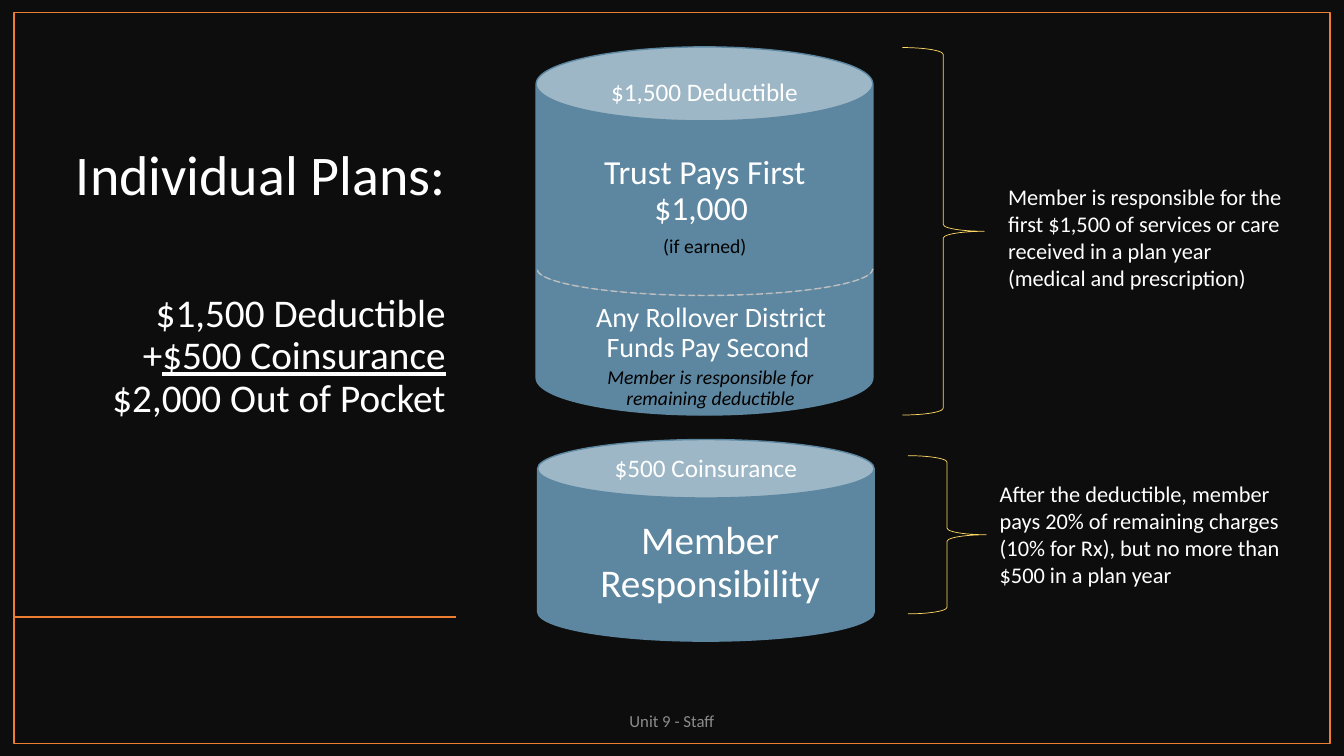
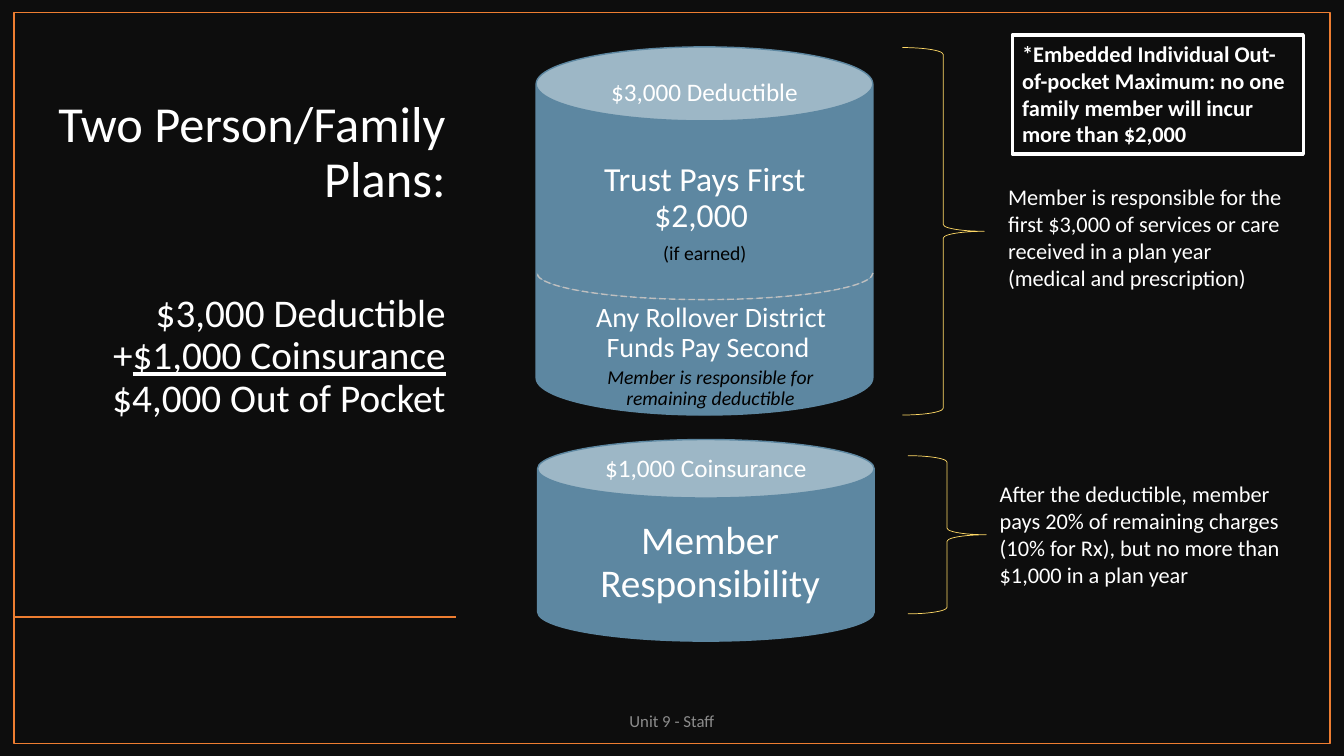
from dataclasses import dataclass

from lxml.etree import SubElement
from pptx import Presentation
from pptx.dml.color import RGBColor
from pptx.enum.dml import MSO_LINE
from pptx.enum.shapes import MSO_CONNECTOR, MSO_SHAPE
from pptx.enum.text import MSO_ANCHOR, MSO_AUTO_SIZE, PP_ALIGN
from pptx.oxml.ns import qn
from pptx.util import Pt

COLORS = {
    "background": "0D0D0D",
    "text": "FFFFFF",
    "dark_text": "000000",
    "footer": "8C8C8C",
    "frame": "ED7D31",
    "can": "5D87A1",
    "brace": "FFD966",
    "arc": "BFBFBF",
}
FONT = "Calibri"
TITLE_ONLY = 5


@dataclass
class Plan:
    title: str
    title_size: int
    title_left: float
    deductible: str
    coinsurance: str
    out_of_pocket: str
    trust_share: str
    trust_top: float
    arc_top: float
    note: str = ""


PLANS = [
    Plan("Individual Plans:", 40, 45.5, "$1,500", "$500", "$2,000", "$1,000", 104.5, 173),
    Plan("Two Person/Family Plans:", 36, 25.5, "$3,000", "$1,000", "$4,000", "$2,000", 109.5, 176,
         "*Embedded Individual Out-of-pocket Maximum: no one family member will incur more than $2,000"),
]


def color(name):
    return RGBColor.from_string(COLORS[name])


def add_run(paragraph, text, size, color_name="text", bold=None, italic=None, underline=None):
    run = paragraph.add_run()
    run.text = text
    font = run.font
    font.name = FONT
    font.size = Pt(size)
    font.color.rgb = color(color_name)
    font.bold = bold
    font.italic = italic
    font.underline = underline


def next_paragraph(frame, alignment, spacing=None, after=None):
    first = frame.paragraphs[0]
    paragraph = frame.add_paragraph() if first.runs else first
    paragraph.alignment = alignment
    paragraph.line_spacing = spacing
    if after is not None:
        paragraph.space_after = Pt(after)
    return paragraph


def add_text_box(slide, box, anchor=MSO_ANCHOR.TOP):
    frame = slide.shapes.add_textbox(*map(Pt, box)).text_frame
    frame.word_wrap = True
    frame.vertical_anchor = anchor
    return frame


def add_text(slide, box, text, size, alignment=PP_ALIGN.LEFT, spacing=None, **style):
    frame = add_text_box(slide, box)
    add_run(next_paragraph(frame, alignment, spacing), text, size, **style)


def add_outlined_shape(slide, kind, box, line_color, line_width=1, fill=None, adjustments=()):
    shape = slide.shapes.add_shape(kind, *map(Pt, box))
    shape.shadow.inherit = False
    if fill:
        shape.fill.solid()
        shape.fill.fore_color.rgb = color(fill)
    else:
        shape.fill.background()
    shape.line.color.rgb = color(line_color)
    shape.line.width = Pt(line_width)
    for index, value in enumerate(adjustments):
        shape.adjustments[index] = value
    return shape


def add_can(slide, box, rim, label, label_top):
    add_outlined_shape(slide, MSO_SHAPE.CAN, box, "can", fill="can", adjustments=[rim])
    left, _, width, _ = box
    add_text(slide, (left, label_top, width, 29), label, 18, PP_ALIGN.CENTER)


def add_brace(slide, box):
    add_outlined_shape(slide, MSO_SHAPE.RIGHT_BRACE, box, "brace", 0.5)


def add_frame(slide):
    add_outlined_shape(slide, MSO_SHAPE.RECTANGLE, (10, 9, 940, 522), "frame")
    connector = slide.shapes.add_connector(
        MSO_CONNECTOR.STRAIGHT, Pt(325.5), Pt(440.75), Pt(10), Pt(440.75))
    connector.line.color.rgb = color("frame")
    connector.line.width = Pt(1)
    SubElement(connector.element.spPr, qn("a:effectLst"))


def add_footer(slide):
    frame = add_text_box(slide, (318, 500.5, 324, 29), MSO_ANCHOR.MIDDLE)
    add_run(next_paragraph(frame, PP_ALIGN.CENTER), "Unit 9 - Staff", 12, "footer")


def fill_title(slide, plan):
    title = slide.shapes.title
    title.left, title.top = Pt(plan.title_left), Pt(52.5)
    title.width, title.height = Pt(325.5 - plan.title_left), Pt(251.5)
    frame = title.text_frame
    frame.word_wrap = True
    frame.auto_size = MSO_AUTO_SIZE.NONE
    frame.vertical_anchor = MSO_ANCHOR.BOTTOM
    add_run(next_paragraph(frame, PP_ALIGN.RIGHT, 0.9, 61), plan.title, plan.title_size)
    add_run(next_paragraph(frame, PP_ALIGN.RIGHT, 0.9), f"{plan.deductible} Deductible", 28)
    total = next_paragraph(frame, PP_ALIGN.RIGHT, 0.9)
    add_run(total, "+", 28)
    add_run(total, f"{plan.coinsurance} Coinsurance", 28, underline=True)
    add_run(next_paragraph(frame, PP_ALIGN.RIGHT, 0.9), f"{plan.out_of_pocket} Out of Pocket", 28)


def add_deductible(slide, plan):
    add_brace(slide, (644.5, 34, 58.5, 262.5))
    add_can(slide, (383, 33.5, 240.5, 263), 0.22, f"{plan.deductible} Deductible", 51)
    frame = add_text_box(slide, (403, plan.trust_top, 201, 94.5))
    add_run(next_paragraph(frame, PP_ALIGN.CENTER), "Trust Pays First", 24)
    add_run(next_paragraph(frame, PP_ALIGN.CENTER, 0.9, 6), f"{plan.trust_share} ", 24)
    add_run(next_paragraph(frame, PP_ALIGN.CENTER, 0.9, 6), "(if earned)", 14, "dark_text")
    add_text(slide, (392.5, 213, 231, 45.5), "Any Rollover District Funds Pay Second ", 20,
             PP_ALIGN.CENTER, 0.9)
    add_text(slide, (403, 259, 209, 38), "Member is responsible for remaining deductible", 14,
             PP_ALIGN.CENTER, 0.9, color_name="dark_text", italic=True)
    arc = add_outlined_shape(slide, MSO_SHAPE.BLOCK_ARC, (383.5, plan.arc_top, 240, 38), "arc",
                             fill="text", adjustments=[108, 0, 0])
    arc.rotation = 180
    arc.line.dash_style = MSO_LINE.DASH
    add_text(slide, (713, 127.5, 211, 85),
             f"Member is responsible for the first {plan.deductible} of services or care "
             "received in a plan year (medical and prescription)", 16)


def add_coinsurance(slide, plan):
    add_can(slide, (384, 314, 240.5, 144), 0.29, f"{plan.coinsurance} Coinsurance", 319.5)
    add_brace(slide, (648.5, 325.5, 56, 113))
    add_text(slide, (420.5, 368.5, 173.5, 68.5), "Member Responsibility", 28,
             PP_ALIGN.CENTER, 0.9)
    add_text(slide, (707, 339.5, 220.5, 85),
             "After the deductible, member pays 20% of remaining charges (10% for Rx), "
             f"but no more than {plan.coinsurance} in a plan year", 16)


def add_note(slide, note):
    shape = add_outlined_shape(slide, MSO_SHAPE.RECTANGLE, (723, 25, 208, 85), "text", 2.25)
    frame = shape.text_frame
    frame.word_wrap = True
    frame.vertical_anchor = MSO_ANCHOR.TOP
    add_run(next_paragraph(frame, PP_ALIGN.LEFT), note, 16, bold=True)


def add_plan_slide(presentation, plan):
    slide = presentation.slides.add_slide(presentation.slide_layouts[TITLE_ONLY])
    fill_title(slide, plan)
    add_frame(slide)
    add_coinsurance(slide, plan)
    add_deductible(slide, plan)
    if plan.note:
        add_note(slide, plan.note)
    add_footer(slide)


def main():
    presentation = Presentation()
    presentation.slide_width, presentation.slide_height = Pt(960), Pt(540)
    background = presentation.slide_master.background.fill
    background.solid()
    background.fore_color.rgb = color("background")
    for plan in PLANS:
        add_plan_slide(presentation, plan)
    presentation.save("out.pptx")


if __name__ == "__main__":
    main()
